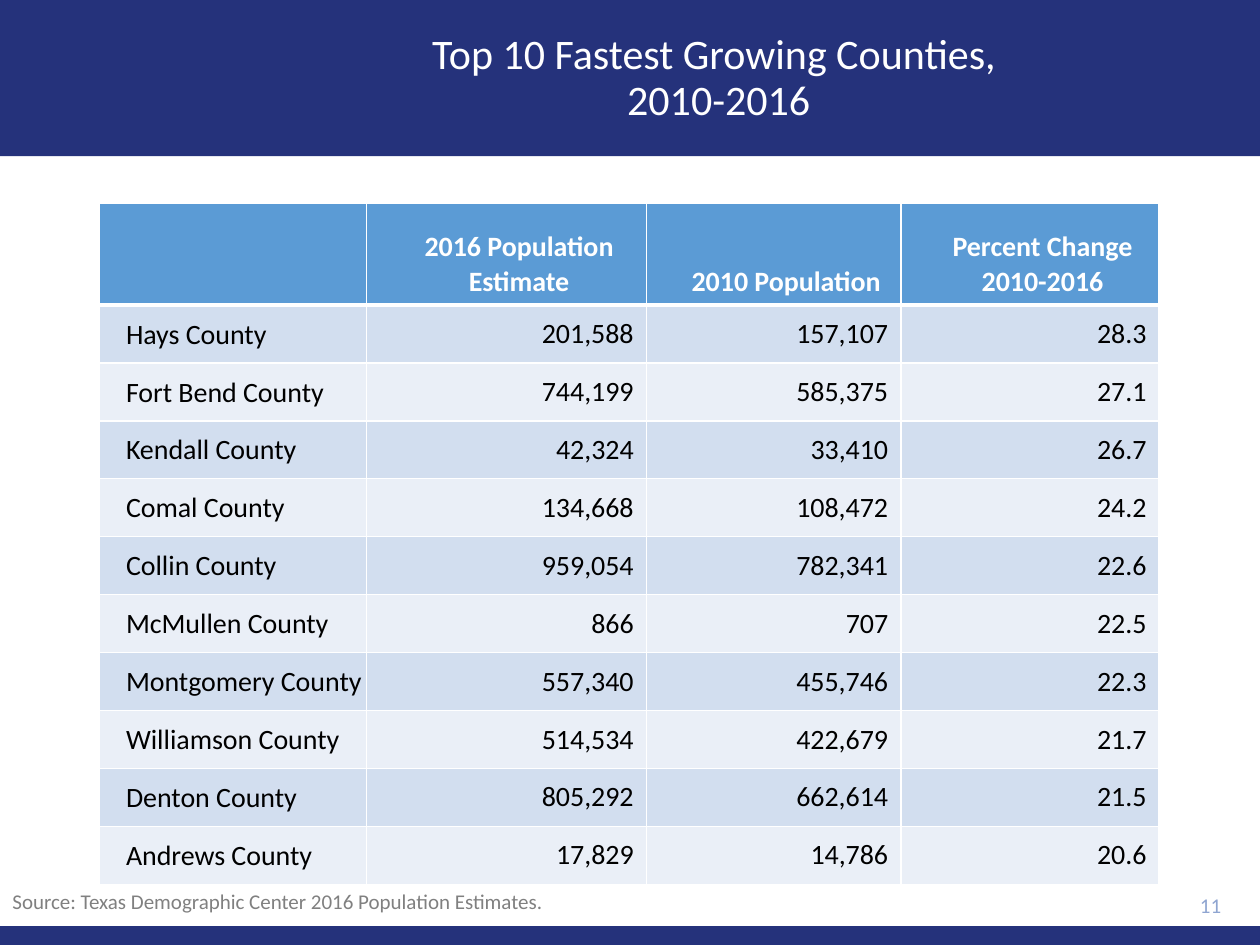
from lxml.etree import SubElement
from pptx import Presentation
from pptx.dml.color import RGBColor
from pptx.enum.shapes import MSO_SHAPE
from pptx.enum.text import MSO_ANCHOR, PP_ALIGN
from pptx.oxml.ns import qn
from pptx.util import Inches, Pt

NAVY = RGBColor(0x25, 0x32, 0x7B)
WHITE = RGBColor(0xFF, 0xFF, 0xFF)
BLACK = RGBColor(0x00, 0x00, 0x00)
GRAY = RGBColor(0x80, 0x80, 0x80)
PERIWINKLE = RGBColor(0x8F, 0xA5, 0xD1)
HEADER_BLUE = RGBColor(0x5B, 0x9B, 0xD5)
ROW_BLUES = (RGBColor(0xD2, 0xDE, 0xEF), RGBColor(0xEA, 0xEF, 0xF7))

GRID_COLUMNS, GRID_ROWS = 100, 75
COLUMN_SPANS = (21.2, 22.2, 20.2, 20.5)
HEADER_SPAN, ROW_SPAN = 8.1, 4.6
HEADERS = ("", "2016 Population Estimate", "2010 Population", "Percent Change\n2010-2016")
COUNTIES = (
    ("Hays County", "201,588", "157,107", "28.3"),
    ("Fort Bend County", "744,199", "585,375", "27.1"),
    ("Kendall County", "42,324", "33,410", "26.7"),
    ("Comal County", "134,668", "108,472", "24.2"),
    ("Collin County", "959,054", "782,341", "22.6"),
    ("McMullen County", "866", "707", "22.5"),
    ("Montgomery County", "557,340", "455,746", "22.3"),
    ("Williamson County", "514,534", "422,679", "21.7"),
    ("Denton County", "805,292", "662,614", "21.5"),
    ("Andrews County", "17,829", "14,786", "20.6"),
)

HEADER_FONT = {"size": Pt(16), "bold": True, "color": WHITE}
BODY_FONT = {"size": Pt(16), "bold": False, "color": BLACK}
NAME_MARGINS = {"margin_left": Inches(0.01), "margin_right": Inches(0.01),
                "margin_top": Inches(0.01), "margin_bottom": 0}


def set_all(target, values):
    for name, value in values.items():
        setattr(target, name, value)


class SlideBuilder:
    """Holds the font, the slide and its grid; lengths are grid columns and rows."""

    font_name = "Calibri"

    def __init__(self, presentation):
        self.column = presentation.slide_width / GRID_COLUMNS
        self.row = presentation.slide_height / GRID_ROWS
        self.slide = presentation.slides.add_slide(presentation.slide_layouts[5])
        self.shapes = self.slide.shapes

    def place(self, left, top, width, height):
        return (round(left * self.column), round(top * self.row),
                round(width * self.column), round(height * self.row))

    def fill_text(self, frame, text, font, alignment, indent=0, **paragraph_format):
        frame.text = text
        for paragraph in frame.paragraphs:
            if indent:
                paragraph._p.get_or_add_pPr().set("marL", str(Inches(indent)))
            set_all(paragraph, {"alignment": alignment, **paragraph_format})
            for run in paragraph.runs:
                set_all(run.font, {"name": self.font_name, "size": font["size"],
                                   "bold": font.get("bold", False)})
                run.font.color.rgb = font["color"]

    def band(self, top, height):
        band = self.shapes.add_shape(MSO_SHAPE.RECTANGLE, *self.place(0, top, GRID_COLUMNS, height))
        band.shadow.inherit = False
        band.fill.solid()
        band.fill.fore_color.rgb = NAVY
        band.line.fill.background()
        self.shapes.element.insert(2, band.element)  # behind the title

    def title(self, text, *box):
        title = self.shapes.title
        title.left, title.top, title.width, title.height = self.place(*box)
        set_all(title.text_frame, {"word_wrap": True, "vertical_anchor": MSO_ANCHOR.MIDDLE})
        self.fill_text(title.text_frame, text, {"size": Pt(24), "color": WHITE},
                       PP_ALIGN.CENTER, line_spacing=0.9)

    def text(self, text, box, color, alignment, anchor):
        frame = self.shapes.add_textbox(*self.place(*box)).text_frame
        set_all(frame, {"word_wrap": True, "vertical_anchor": anchor})
        self.fill_text(frame, text, {"size": Pt(12), "color": color}, alignment)

    def borders(self, cell, bottom_points):
        """Draw white cell borders; call before the fill so the XML order holds."""
        properties = cell._tc.get_or_add_tcPr()
        for side, points in (("L", 1), ("R", 1), ("T", 1), ("B", bottom_points)):
            line = SubElement(properties, qn(f"a:ln{side}"), w=str(Pt(points)))
            fill = SubElement(line, qn("a:solidFill"))
            SubElement(fill, qn("a:srgbClr"), val=str(WHITE))

    def cell(self, cell, text, font, fill, alignment, anchor, indent=0, bottom_points=1):
        self.borders(cell, bottom_points)
        cell.fill.solid()
        cell.fill.fore_color.rgb = fill
        cell.vertical_anchor = anchor
        self.fill_text(cell.text_frame, text, font, alignment, indent)

    def table(self, left, top):
        height = HEADER_SPAN + ROW_SPAN * len(COUNTIES)
        table = self.shapes.add_table(
            len(COUNTIES) + 1, len(HEADERS),
            *self.place(left, top, sum(COLUMN_SPANS), height)).table
        for column, span in zip(table.columns, COLUMN_SPANS):
            column.width = round(span * self.column)
        for index, row in enumerate(table.rows):
            row.height = round((ROW_SPAN if index else HEADER_SPAN) * self.row)
        for index, header in enumerate(HEADERS):
            self.cell(table.cell(0, index), header, HEADER_FONT, HEADER_BLUE,
                      PP_ALIGN.CENTER, MSO_ANCHOR.BOTTOM, indent=0.2, bottom_points=3)
        for row, county in enumerate(COUNTIES, start=1):
            for index, value in enumerate(county):
                cell = table.cell(row, index)
                is_name = index == 0
                if is_name:
                    set_all(cell, NAME_MARGINS)
                self.cell(cell, value, BODY_FONT, ROW_BLUES[(row - 1) % 2],
                          PP_ALIGN.LEFT if is_name else PP_ALIGN.RIGHT,
                          MSO_ANCHOR.MIDDLE, indent=0.2 if is_name else 0)


def main():
    presentation = Presentation()
    presentation.slide_width, presentation.slide_height = Inches(10), Inches(7.5)
    builder = SlideBuilder(presentation)
    builder.band(0, 12.4)
    builder.band(73.5, 1.5)
    builder.title("Top 10 Fastest Growing Counties, \v2010-2016", 15.3, 0.7, 83.5, 11.1)
    builder.text("11", (89, 70.1, 8.9, 3.4), PERIWINKLE, PP_ALIGN.RIGHT, MSO_ANCHOR.MIDDLE)
    builder.table(7.9, 16.1)
    builder.text("Source: Texas Demographic Center 2016 Population Estimates.",
                 (0, 70, 87.5, 5), GRAY, PP_ALIGN.LEFT, MSO_ANCHOR.TOP)
    presentation.save("out.pptx")


if __name__ == "__main__":
    main()
